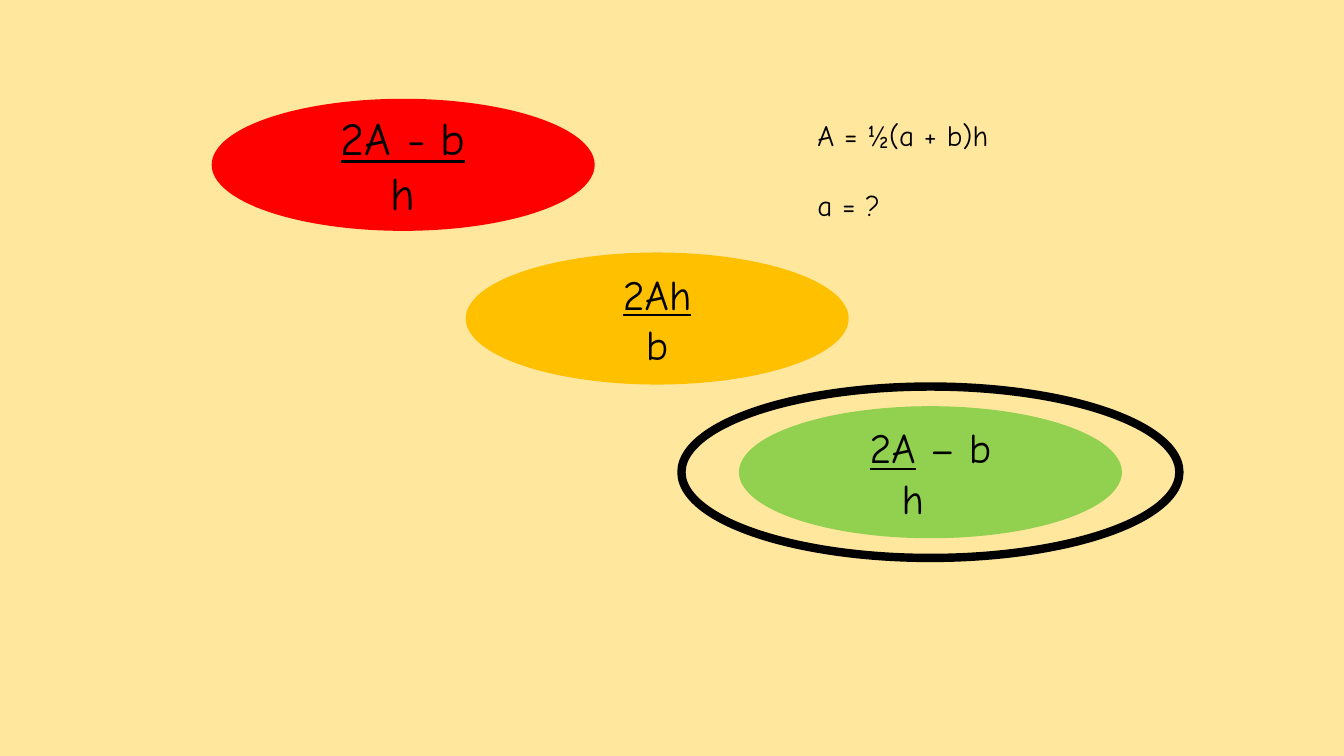
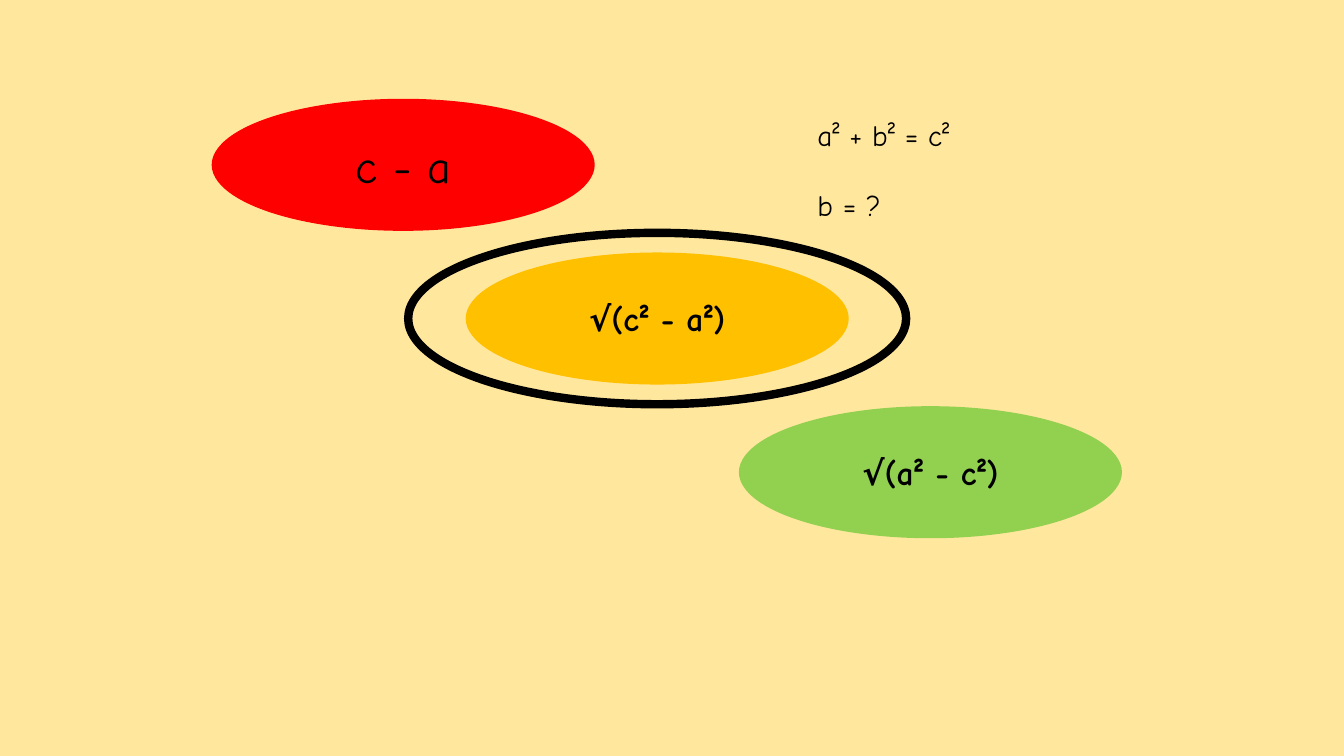
from dataclasses import dataclass

from pptx import Presentation
from pptx.dml.color import RGBColor
from pptx.enum.shapes import MSO_SHAPE
from pptx.enum.text import MSO_ANCHOR, PP_ALIGN
from pptx.util import Inches, Pt

COLORS = {"page": "FFE79E", "ink": "000000",
          "red": "FF0000", "amber": "FFC000", "green": "92D050"}
FONT = "Comic Neue"

# Positions and sizes are percentages of the slide's width and height.
SPOTS = {"red": 15.75, "amber": 34.65, "green": 54.98}
FIRST_TOP, STEP = 13.07, 20.33
OVAL_W, OVAL_H = 28.5, 17.47
RING_W, RING_H = 37.05, 22.67
QUESTION_BOX = (60.08, 14.8, 22.43, 15.47)
QUESTION_SIZE, QUESTION_GAP = 20.9, 25


@dataclass(frozen=True)
class Line:
    """One paragraph: an underlined start, then plain text."""
    under: str = ""
    plain: str = ""
    indent: float = 0  # inches; a positive value also aligns left


@dataclass(frozen=True)
class Answer:
    lines: tuple[Line, ...]
    size: float
    bold: bool = False


@dataclass(frozen=True)
class Quiz:
    question: tuple[Line, ...]
    answers: dict[str, Answer]
    correct: str


QUIZZES = (
    Quiz(
        question=(Line(plain="A = ½(a + b)h"), Line(plain="a = ?")),
        answers={
            "red": Answer((Line("2A - b"), Line(plain="h")), 32.9),
            "amber": Answer((Line("2Ah"), Line(plain="b")), 29.9),
            "green": Answer((Line("2A", " – b"),
                             Line(plain="h", indent=0.96)), 29.9),
        },
        correct="green",
    ),
    Quiz(
        question=(Line(plain="a² + b² = c²"), Line(plain="b = ?")),
        answers={
            "red": Answer((Line(plain="c - a"),), 32.9),
            "amber": Answer((Line(plain="√(c² - a²)"),), 23.9, bold=True),
            "green": Answer((Line(plain="√(a² - c²)"),), 23.9, bold=True),
        },
        correct="amber",
    ),
)


def rgb(name: str) -> RGBColor:
    return RGBColor.from_string(COLORS[name])


def place(prs, left: float, top: float, width: float, height: float) -> list[int]:
    """Turn slide percentages into lengths."""
    w, h = prs.slide_width, prs.slide_height
    return [round(share * side / 100)
            for share, side in zip((left, top, width, height), (w, h, w, h))]


def write(tf, lines: tuple[Line, ...], *, size: float, bold: bool = False,
          align=PP_ALIGN.LEFT, anchor=MSO_ANCHOR.TOP, gap: float = 0) -> None:
    tf.word_wrap = True
    tf.vertical_anchor = anchor
    for i, line in enumerate(lines):
        p = tf.add_paragraph() if i else tf.paragraphs[0]
        p.alignment = PP_ALIGN.LEFT if line.indent else align
        if line.indent:
            p._p.get_or_add_pPr().set("marL", str(Inches(line.indent)))
        if i and gap:
            p.space_before = Pt(gap)
        for text, underline in ((line.under, True), (line.plain, False)):
            if text:
                r = p.add_run()
                r.text = text
                r.font.name, r.font.size = FONT, Pt(size)
                r.font.bold, r.font.underline = bold, underline
                r.font.color.rgb = rgb("ink")


def add_oval(prs, s, center: tuple[float, float], width: float, height: float,
             fill: str = ""):
    """Draw a filled oval, or a thick ring when no fill is named."""
    x, y = center
    sp = s.shapes.add_shape(MSO_SHAPE.OVAL, *place(
        prs, x - width / 2, y - height / 2, width, height))
    sp.shadow.inherit = False
    if fill:
        sp.fill.solid()
        sp.fill.fore_color.rgb = rgb(fill)
        sp.line.fill.background()
    else:
        sp.fill.background()
        sp.line.color.rgb = rgb("ink")
        sp.line.width = Pt(6)
    return sp


def add_quiz(prs, quiz: Quiz) -> None:
    s = prs.slides.add_slide(prs.slide_layouts[6])
    s.background.fill.solid()
    s.background.fill.fore_color.rgb = rgb("page")

    box = s.shapes.add_textbox(*place(prs, *QUESTION_BOX))
    write(box.text_frame, quiz.question, size=QUESTION_SIZE, gap=QUESTION_GAP)

    centers = {name: (left + OVAL_W / 2, FIRST_TOP + row * STEP + OVAL_H / 2)
               for row, (name, left) in enumerate(SPOTS.items())}
    for name, answer in quiz.answers.items():
        sp = add_oval(prs, s, centers[name], OVAL_W, OVAL_H, fill=name)
        write(sp.text_frame, answer.lines, size=answer.size, bold=answer.bold,
              align=PP_ALIGN.CENTER, anchor=MSO_ANCHOR.MIDDLE)
    add_oval(prs, s, centers[quiz.correct], RING_W, RING_H)


def main() -> None:
    prs = Presentation()
    prs.slide_width, prs.slide_height = Inches(13.33), Inches(7.5)
    for quiz in QUIZZES:
        add_quiz(prs, quiz)
    prs.save("out.pptx")


if __name__ == "__main__":
    main()
